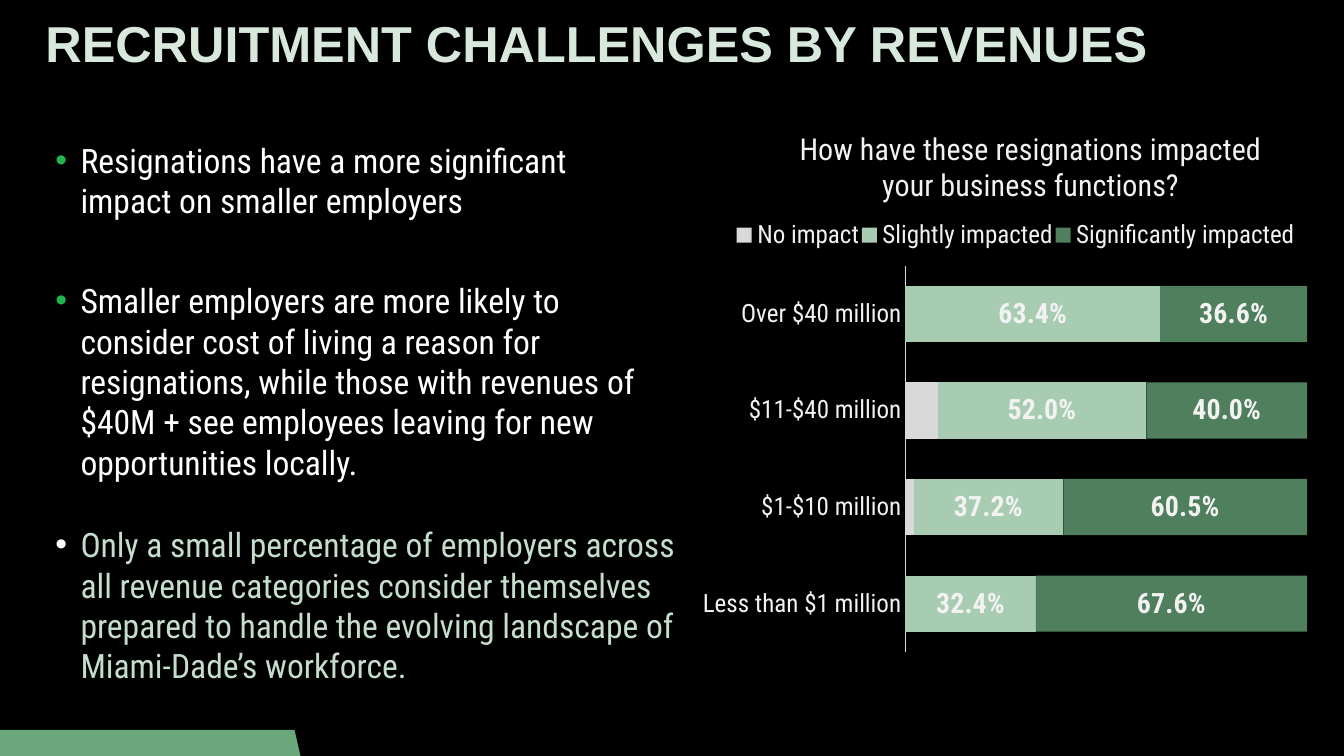
from dataclasses import dataclass
from typing import Any, Optional

from lxml.etree import SubElement
from pptx import Presentation
from pptx.chart.data import CategoryChartData
from pptx.dml.color import RGBColor
from pptx.enum.chart import XL_CHART_TYPE, XL_LEGEND_POSITION, XL_TICK_MARK
from pptx.oxml import parse_xml
from pptx.oxml.ns import nsdecls, qn
from pptx.util import Emu, Inches, Pt


@dataclass(frozen=True)
class Theme:
    heading_font: str = "Arial"
    body_font: str = "Roboto Condensed"
    background: str = "000000"
    green: str = "6AA87B"
    light_green: str = "A8CCB2"
    heading: str = "D8E8DD"
    white: str = "FFFFFF"
    highlight: str = "C5DDCC"
    bullet: str = "21B54C"
    grey: str = "D9D9D9"
    chart_text: str = "F2F2F2"
    heading_size: float = 36
    body_size: float = 24
    chart_title_size: float = 21.6
    label_size: float = 20
    chart_size: float = 18


@dataclass(frozen=True)
class Area:
    """Percentages of the slide, or of the chart for chart parts."""
    left: float
    top: float
    width: float
    height: float


@dataclass(frozen=True)
class Bullet:
    text: str
    area: Area
    color: str
    bullet_color: str
    spacing: dict[str, Any]


@dataclass(frozen=True)
class Series:
    name: str
    values: tuple[float, ...]
    color: str
    labelled: bool = True
    opacity: Optional[int] = None


THEME = Theme()
SLIDE_WIDTH, SLIDE_HEIGHT = Inches(13.33), Inches(7.5)

HEADING = "RECRUITMENT CHALLENGES BY REVENUES"
HEADING_AREA = Area(3.38, 2.53, 94.82, 9.87)
BULLETS = [
    Bullet("Resignations have a more significant impact on smaller employers",
           Area(3.38, 17.87, 46.66, 13.47), THEME.white, THEME.bullet, {"space_before": Pt(10)}),
    Bullet("Smaller employers are more likely to consider cost of living a reason for "
           "resignations, while those with revenues of $40M + see employees leaving for new "
           "opportunities locally.",
           Area(3.38, 36.4, 45.16, 26.8), THEME.white, THEME.bullet, {"space_before": Pt(10)}),
    Bullet("Only a small percentage of employers across all revenue categories consider "
           "themselves prepared to handle the evolving landscape of Miami-Dade’s workforce.",
           Area(3.38, 68.67, 48.09, 26.8), THEME.highlight, THEME.white, {"space_after": Pt(6)}),
]
BANNER = [(0, 100), (22.36, 100), (21.91, 96.53), (0, 96.53)]

CHART_AREA = Area(52.29, 13.47, 45.84, 74.27)
PLOT_AREA = Area(32.5, 29.2, 65.6, 68.8)
LEGEND_AREA = Area(4.5, 20.5, 92, 6.5)
TITLE_AREA = Area(14.7, 4.5, 71, 13)
CHART_TITLE = "How have these resignations impacted\nyour business functions?"
CATEGORIES = ["Less than $1 million", "$1-$10 million", "$11-$40 million", "Over $40 million"]
SERIES = [
    Series("No impact", (0, 0.02, 0.08, 0), THEME.grey, labelled=False),
    Series("Slightly impacted", (0.324, 0.372, 0.52, 0.634), THEME.light_green),
    Series("Significantly impacted", (0.676, 0.605, 0.4, 0.366), THEME.green, opacity=76),
]


def across(share: float) -> Emu:
    return Emu(round(SLIDE_WIDTH * share / 100))


def down(share: float) -> Emu:
    return Emu(round(SLIDE_HEIGHT * share / 100))


def frame(area: Area) -> tuple[Emu, Emu, Emu, Emu]:
    return across(area.left), down(area.top), across(area.width), down(area.height)


def apply(target: Any, values: dict[str, Any]) -> None:
    for name, value in values.items():
        setattr(target, name, value)


def style_font(font: Any, name: str, size: float, color: str, bold: bool = False) -> None:
    apply(font, {"name": name, "size": Pt(size), "bold": bold})
    font.color.rgb = RGBColor.from_string(color)


def paint(fill: Any, color: str) -> None:
    fill.solid()
    fill.fore_color.rgb = RGBColor.from_string(color)


def add_text(page: Any, area: Area, text: str, spacing: dict[str, Any]) -> tuple[Any, Any, Any]:
    box = page.shapes.add_textbox(*frame(area))
    box.text_frame.word_wrap = True
    para = box.text_frame.paragraphs[0]
    apply(para, spacing)
    span = para.add_run()
    span.text = text
    return box, para, span


def add_heading(page: Any) -> None:
    box, _, span = add_text(page, HEADING_AREA, HEADING,
                            {"line_spacing": 0.9, "space_before": Pt(10)})
    sides = ("left", "top", "right", "bottom")
    apply(box.text_frame, {f"margin_{side}": 0 for side in sides})
    style_font(span.font, THEME.heading_font, THEME.heading_size, THEME.heading, True)


def add_bullet(page: Any, bullet: Bullet) -> None:
    _, para, span = add_text(page, bullet.area, bullet.text, bullet.spacing)
    style_font(span.font, THEME.body_font, THEME.body_size, bullet.color)
    properties = para._p.get_or_add_pPr()
    indent = Inches(0.25)
    properties.set("marL", str(indent))
    properties.set("indent", str(-indent))
    SubElement(SubElement(properties, qn("a:buClr")), qn("a:srgbClr"), val=bullet.bullet_color)
    SubElement(properties, qn("a:buFont"), typeface="Arial")
    SubElement(properties, qn("a:buChar"), char="•")


def add_banner(page: Any) -> None:
    points = [(across(x), down(y)) for x, y in BANNER]
    builder = page.shapes.build_freeform(*points[0])
    builder.add_line_segments(points[1:], close=True)
    banner = builder.convert_to_shape()
    paint(banner.fill, THEME.green)
    banner.line.fill.background()
    banner.shadow.inherit = False


def place(part: Any, area: Area, index: int, inner: bool = False) -> None:
    """Fix a chart part at a share of the chart's size."""
    for old in part.findall(qn("c:layout")):
        part.remove(old)
    fields = {"layoutTarget": "inner"} if inner else {}
    fields |= {"xMode": "edge", "yMode": "edge", "x": area.left / 100, "y": area.top / 100,
               "w": area.width / 100, "h": area.height / 100}
    rows = "".join(f'<c:{name} val="{value}"/>' for name, value in fields.items())
    part.insert(index, parse_xml(
        f'<c:layout {nsdecls("c")}><c:manualLayout>{rows}</c:manualLayout></c:layout>'))


def add_impact_chart(page: Any) -> None:
    data = CategoryChartData(number_format="0.0%")
    data.categories = CATEGORIES
    for item in SERIES:
        data.add_series(item.name, item.values)
    chart = page.shapes.add_chart(
        XL_CHART_TYPE.BAR_STACKED_100, *frame(CHART_AREA), data).chart
    style_font(chart.font, THEME.body_font, THEME.chart_size, THEME.chart_text)

    # Title and legend
    chart.has_title = chart.has_legend = True
    chart.chart_title.text_frame.text = CHART_TITLE
    for para in chart.chart_title.text_frame.paragraphs:
        for span in para.runs:
            style_font(span.font, THEME.body_font, THEME.chart_title_size, THEME.chart_text)
    apply(chart.legend, {"position": XL_LEGEND_POSITION.TOP, "include_in_layout": False})
    style_font(chart.legend.font, THEME.body_font, THEME.chart_size, THEME.chart_text)
    place(chart.chart_title._element, TITLE_AREA, 1)
    place(chart.legend._element, LEGEND_AREA, 1)
    place(chart._chartSpace.chart.plotArea, PLOT_AREA, 0, inner=True)

    # Axes
    ticks = {"major_tick_mark": XL_TICK_MARK.NONE, "minor_tick_mark": XL_TICK_MARK.NONE}
    apply(chart.category_axis, ticks)
    apply(chart.value_axis, {"visible": False, "has_major_gridlines": False,
                             "minimum_scale": 0, "maximum_scale": 1})
    style_font(chart.category_axis.tick_labels.font, THEME.body_font,
               THEME.chart_size, THEME.chart_text)
    line = chart.category_axis.format.line
    line.width = Pt(0.75)
    paint(line.fill, THEME.grey)

    # Bars and their labels
    plot = chart.plots[0]
    apply(plot, {"gap_width": 72, "overlap": 100, "vary_by_categories": False})
    for item, bars in zip(SERIES, plot.series):
        paint(bars.format.fill, item.color)
        if item.opacity is not None:
            color = bars._element.find(".//" + qn("a:srgbClr"))
            SubElement(color, qn("a:alpha"), val=str(item.opacity * 1000))
        if item.labelled:
            labels = bars.data_labels
            apply(labels, {"show_value": True, "number_format": "0.0%",
                           "number_format_is_linked": False})
            style_font(labels.font, THEME.body_font, THEME.label_size, THEME.chart_text, True)


def main() -> None:
    deck = Presentation()
    apply(deck, {"slide_width": SLIDE_WIDTH, "slide_height": SLIDE_HEIGHT})
    page = deck.slides.add_slide(deck.slide_layouts[6])
    paint(page.background.fill, THEME.background)
    add_banner(page)
    add_heading(page)
    for bullet in BULLETS:
        add_bullet(page, bullet)
    add_impact_chart(page)
    deck.save("out.pptx")


if __name__ == "__main__":
    main()
